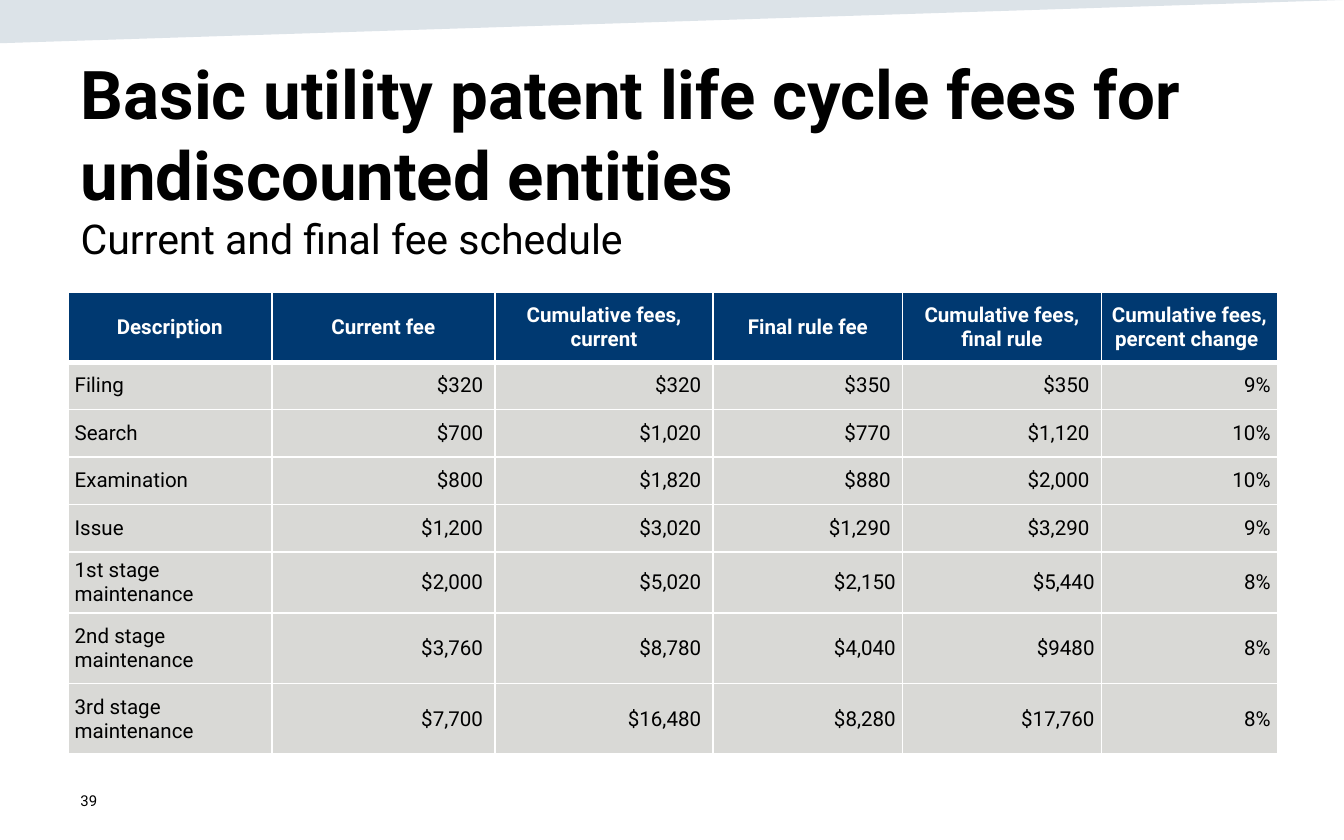
from lxml import etree
from pptx import Presentation
from pptx.dml.color import RGBColor
from pptx.enum.text import MSO_ANCHOR, MSO_AUTO_SIZE, PP_ALIGN
from pptx.oxml.ns import qn
from pptx.util import Pt

FONT = "Roboto"
BLACK = RGBColor(0x00, 0x00, 0x00)
WHITE = RGBColor(0xFF, 0xFF, 0xFF)
NAVY = RGBColor(0x00, 0x39, 0x71)
GREY = RGBColor(0xD9, 0xD9, 0xD6)
TEAL = RGBColor(0x16, 0x44, 0x69)

LEFT, CENTER, RIGHT = PP_ALIGN.LEFT, PP_ALIGN.CENTER, PP_ALIGN.RIGHT
TOP, MIDDLE = MSO_ANCHOR.TOP, MSO_ANCHOR.MIDDLE
NO_FIT = MSO_AUTO_SIZE.NONE

TITLE = ["Basic utility patent life cycle fees for ", "undiscounted entities"]
SUBTITLE = "Current and final fee schedule"
HEADS = ["Description", "Current fee", "Cumulative fees, current",
         "Final rule fee", "Cumulative fees, final rule",
         "Cumulative fees, percent change "]
FEES = [
    ["Filing", "$320 ", "$320 ", "$350 ", "$350 ", "9%"],
    ["Search", "$700 ", "$1,020 ", "$770 ", "$1,120 ", "10%"],
    ["Examination", "$800 ", "$1,820 ", "$880 ", "$2,000 ", "10%"],
    ["Issue", "$1,200 ", "$3,020 ", "$1,290 ", "$3,290 ", "9%"],
    ["1st stage maintenance", "$2,000 ", "$5,020 ", "$2,150", "$5,440", "8%"],
    ["2nd stage maintenance", "$3,760 ", "$8,780 ", "$4,040", "$9480", "8%"],
    ["3rd stage maintenance", "$7,700 ", "$16,480 ", "$8,280", "$17,760", "8%"],
]
WIDTHS = [109.2, 119.6, 116.9, 101.5, 106.5, 94.3]
HEIGHTS = [37.5] + [25.4] * 5 + [37.8] * 2


def add_run(para, text, size, color=BLACK, bold=False):
    run = para.add_run()
    run.text = text
    font = run.font
    font.name, font.size, font.bold = FONT, Pt(size), bold
    font.color.rgb = color


def add_break(para, size):
    para.add_line_break()
    mark = para._p.findall(qn("a:br"))[-1]
    etree.SubElement(mark, qn("a:rPr"), sz=str(size * 100))


def add_band(slide):
    """Pale wedge along the top edge."""
    pen = slide.shapes.build_freeform(Pt(0), Pt(0))
    pen.add_line_segments([(Pt(0), Pt(23.2)), (Pt(720), Pt(0))])
    band = pen.convert_to_shape()
    band.shadow.inherit = False
    band.fill.solid()
    band.fill.fore_color.rgb = TEAL
    tint = band._element.spPr.find(qn("a:solidFill"))[0]
    etree.SubElement(tint, qn("a:alpha"), val="15000")
    band.line.fill.background()


def add_title(slide):
    title = slide.shapes.title
    title.left, title.top = Pt(36), Pt(24.5)
    title.width, title.height = Pt(648), Pt(75)
    frame = title.text_frame
    frame.word_wrap, frame.auto_size = True, NO_FIT
    frame.vertical_anchor = TOP
    para = frame.paragraphs[0]
    para.alignment, para.line_spacing = LEFT, 1.0
    for line in TITLE:
        add_run(para, line, 36, bold=True)
        add_break(para, 36)
    add_run(para, SUBTITLE, 22)


def set_edges(cell, base):
    """White cell borders; base is the bottom width in points."""
    props = cell._tc.get_or_add_tcPr()
    for side, width in zip("LRTB", (1, 1, 1, base)):
        line = etree.SubElement(props, qn(f"a:ln{side}"), w=str(Pt(width)))
        fill = etree.SubElement(line, qn("a:solidFill"))
        etree.SubElement(fill, qn("a:srgbClr"), val=str(WHITE))


def fill_cell(cell, text, align, head):
    set_edges(cell, 3 if head else 1)
    cell.fill.solid()
    cell.fill.fore_color.rgb = NAVY if head else GREY
    cell.vertical_anchor = MIDDLE
    pad = Pt(0.7 if head else 3.6)
    cell.margin_left = cell.margin_right = cell.margin_top = pad
    cell.margin_bottom = Pt(0) if head else pad
    para = cell.text_frame.paragraphs[0]
    para.alignment = align
    add_run(para, text, 11, WHITE if head else BLACK, head)


def add_fees(slide):
    rows = [HEADS] + FEES
    table = slide.shapes.add_table(
        len(rows), len(HEADS), Pt(36.4), Pt(156.5),
        Pt(sum(WIDTHS)), Pt(sum(HEIGHTS))).table
    table.horz_banding = False
    for col, width in zip(table.columns, WIDTHS):
        col.width = Pt(width)
    for row, height in zip(table.rows, HEIGHTS):
        row.height = Pt(height)
    for r, row in enumerate(rows):
        for c, text in enumerate(row):
            align = CENTER if r == 0 else RIGHT if c else LEFT
            fill_cell(table.cell(r, c), text, align, r == 0)


def add_number(slide, text):
    box = slide.shapes.add_textbox(Pt(36), Pt(417), Pt(162), Pt(24))
    frame = box.text_frame
    frame.word_wrap = True
    frame.vertical_anchor = MIDDLE
    add_run(frame.paragraphs[0], text, 8)


def main():
    deck = Presentation()
    deck.slide_width, deck.slide_height = Pt(720), Pt(450)
    slide = deck.slides.add_slide(deck.slide_layouts[5])  # title only
    add_band(slide)
    add_title(slide)
    add_fees(slide)
    add_number(slide, "39")
    deck.save("out.pptx")


if __name__ == "__main__":
    main()
